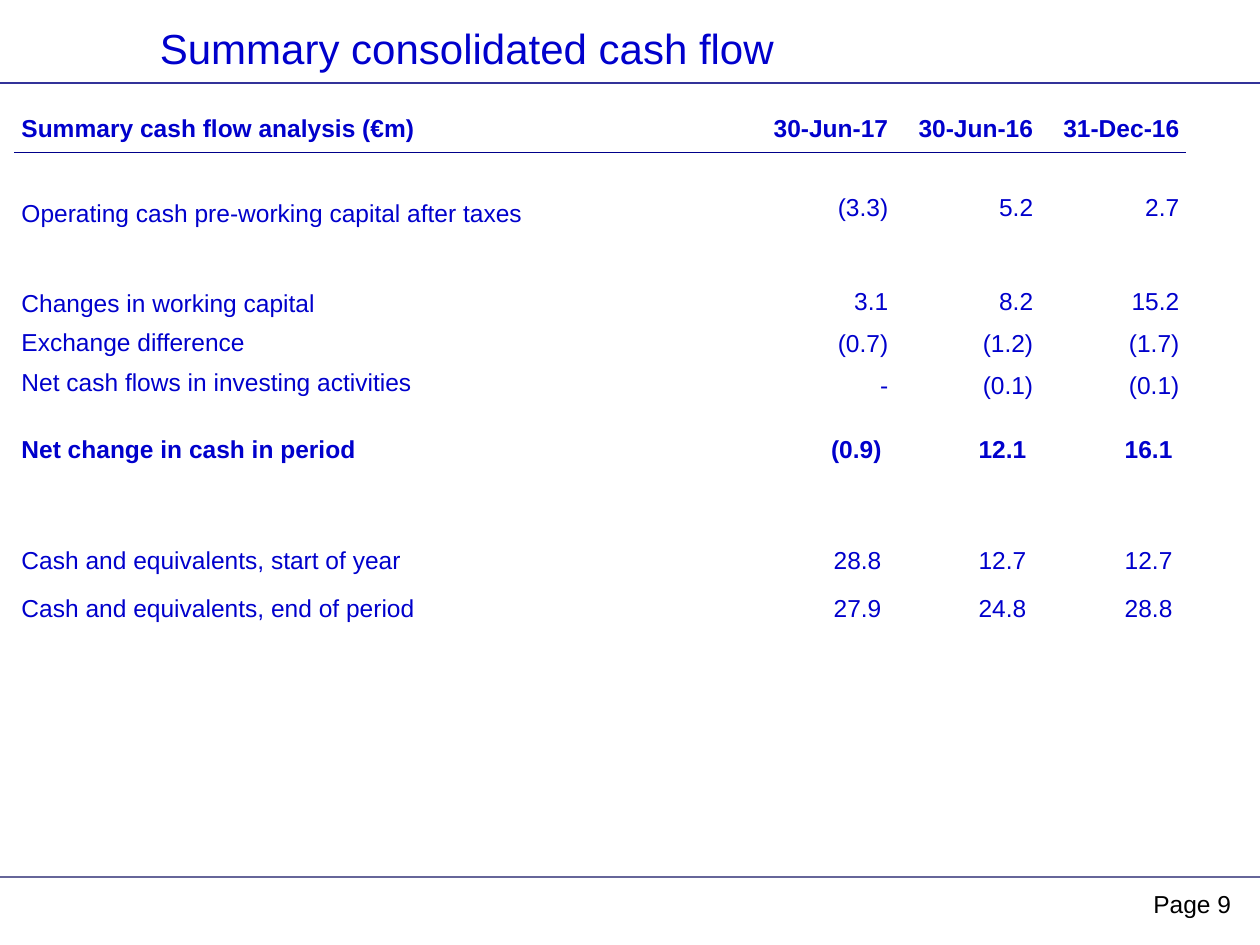
from lxml import etree
from pptx import Presentation
from pptx.dml.color import RGBColor
from pptx.enum.shapes import MSO_CONNECTOR
from pptx.enum.text import MSO_ANCHOR, PP_ALIGN
from pptx.oxml import parse_xml
from pptx.oxml.ns import nsdecls, qn
from pptx.util import Inches, Pt

LEFT, CENTER, RIGHT = PP_ALIGN.LEFT, PP_ALIGN.CENTER, PP_ALIGN.RIGHT
MIDDLE = MSO_ANCHOR.MIDDLE
STRAIGHT = MSO_CONNECTOR.STRAIGHT
FONT = "Arial"
COLORS = {
    "text": "0000CC",
    "page": "000000",
    "header_rule": "333399",
    "footer_rule": "666699",
    "table_rule": "00008A",
}

COL_WIDTHS = [5.83, 1.15, 1.15, 1.16]
ROW_HEIGHTS = [0.37, 0.66, 1.39, 0.63, 0.37, 0.39, 0.37, 0.38, 0.41]
BOLD_ROWS = {0, 3}
INSET = 0.05
TOP_INSETS = {1: (0.37, 0.27), 2: (0.37, 0.38)}
LABEL_GAP, VALUE_GAP = 6.8, 8.4
BLANK_ROW = [""] * 4
ROWS = [
    ["Summary cash flow analysis (€m)", "30-Jun-17", "30-Jun-16", "31-Dec-16"],
    ["Operating cash pre-working capital after taxes", "(3.3)", "5.2", "2.7"],
    [
        "Changes in working capital\nExchange difference\nNet cash flows in investing activities",
        "3.1\n(0.7)\n-",
        "8.2\n(1.2)\n(0.1)",
        "15.2\n(1.7)\n(0.1)",
    ],
    ["Net change in cash in period", "(0.9) ", "12.1 ", "16.1 "],
    BLANK_ROW,
    ["Cash and equivalents, start of year", "28.8 ", "12.7 ", "12.7 "],
    ["Cash and equivalents, end of period", "27.9 ", "24.8 ", "28.8 "],
    BLANK_ROW,
    BLANK_ROW,
]


def style(p, size, color, align, bold=False):
    p.alignment = align
    p.font.name = FONT
    p.font.size = Pt(size)
    p.font.bold = bold
    p.font.color.rgb = RGBColor.from_string(COLORS[color])


def add_text(s, text, left, top, width, height, size, color, align):
    box = s.shapes.add_textbox(Inches(left), Inches(top), Inches(width), Inches(height))
    tf = box.text_frame
    tf.word_wrap = True
    p = tf.paragraphs[0]
    p.text = text
    style(p, size, color, align)


def add_rule(s, y, color):
    line = s.shapes.add_connector(STRAIGHT, 0, Inches(y), Inches(10), Inches(y))
    line.line.color.rgb = RGBColor.from_string(COLORS[color])
    line.line.width = Pt(0.75)
    etree.SubElement(line._element.spPr, qn("a:effectLst"))


def add_border(cell, side):
    border = parse_xml(
        f'<a:{side} {nsdecls("a")} w="{Pt(1)}"><a:solidFill>'
        f'<a:srgbClr val="{COLORS["table_rule"]}"/></a:solidFill></a:{side}>'
    )
    cell._tc.get_or_add_tcPr().insert(0, border)


def fill_cell(cell, text, row, col):
    is_label = col == 0
    label_top, value_top = TOP_INSETS.get(row, (INSET, INSET))
    cell.margin_left = cell.margin_right = cell.margin_bottom = Inches(INSET)
    cell.margin_top = Inches(label_top if is_label else value_top)
    cell.vertical_anchor = MIDDLE
    cell.fill.background()
    cell.text = text
    for i, p in enumerate(cell.text_frame.paragraphs):
        style(p, 14, "text", LEFT if is_label else RIGHT, row in BOLD_ROWS)
        if i:
            p.space_before = Pt(LABEL_GAP if is_label else VALUE_GAP)


def add_cash_flow_table(s):
    frame = s.shapes.add_table(
        len(ROWS), len(COL_WIDTHS), Inches(0.12), Inches(0.84),
        Inches(sum(COL_WIDTHS)), Inches(sum(ROW_HEIGHTS)),
    )
    table = frame.table
    table.first_row = False
    table.horz_banding = False
    for column, width in zip(table.columns, COL_WIDTHS):
        column.width = Inches(width)
    for r, (values, height) in enumerate(zip(ROWS, ROW_HEIGHTS)):
        table.rows[r].height = Inches(height)
        for c, text in enumerate(values):
            fill_cell(table.cell(r, c), text, r, c)
    for c in range(len(COL_WIDTHS)):
        add_border(table.cell(0, c), "lnB")
        add_border(table.cell(1, c), "lnT")


def main():
    prs = Presentation()
    prs.slide_width, prs.slide_height = Inches(10), Inches(7.5)
    s = prs.slides.add_slide(prs.slide_layouts[6])
    add_rule(s, 6.96, "footer_rule")
    add_rule(s, 0.66, "header_rule")
    add_text(s, "Summary consolidated cash flow", 0.75, 0.13, 5.91, 0.5, 24, "text", CENTER)
    add_text(s, "Page 9", 7.54, 7.01, 2.33, 0.52, 14, "page", RIGHT)
    add_cash_flow_table(s)
    prs.save("out.pptx")


if __name__ == "__main__":
    main()
